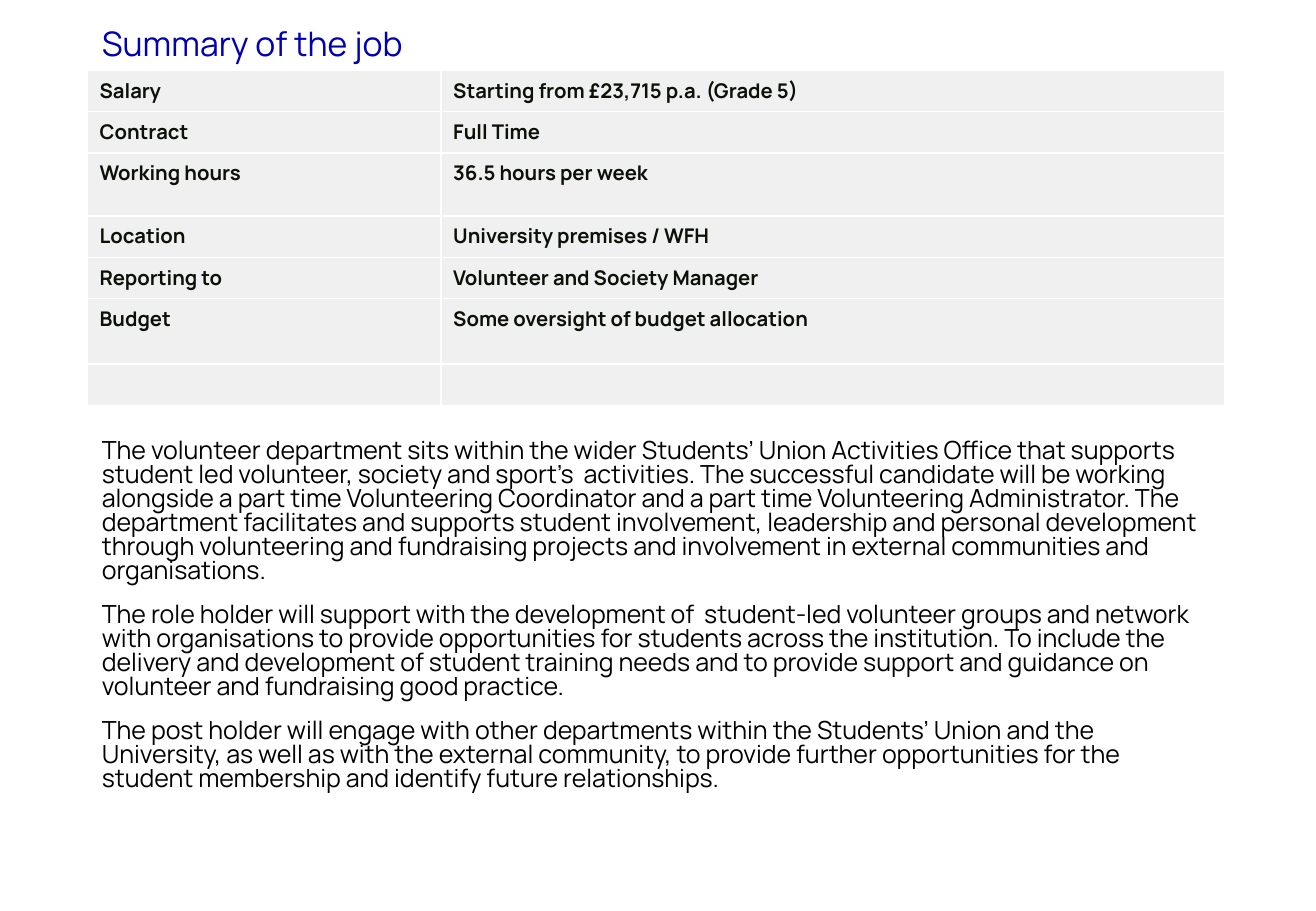
from dataclasses import dataclass

from lxml.etree import SubElement
from pptx import Presentation
from pptx.dml.color import RGBColor
from pptx.enum.text import MSO_ANCHOR
from pptx.oxml.ns import qn
from pptx.slide import Slide
from pptx.table import _Cell
from pptx.text.text import _Paragraph
from pptx.util import Emu, Pt

EMU_PER_PX = 9144
FONT = "Manrope"
BLACK = RGBColor(0x00, 0x00, 0x00)
BLUE = RGBColor(0x00, 0x01, 0xB4)
INK = RGBColor(0x0B, 0x11, 0x07)
GREY = RGBColor(0xF0, 0xF0, 0xF0)
WHITE = RGBColor(0xFF, 0xFF, 0xFF)


@dataclass(frozen=True)
class Style:
    size: float
    color: RGBColor
    bold: bool = False


@dataclass(frozen=True)
class TextBlock:
    left: int
    top: int
    width: int
    height: int
    paragraphs: tuple[str, ...]
    style: Style
    line_spacing: float
    space_after: int
    anchor: MSO_ANCHOR


@dataclass(frozen=True)
class JobFact:
    label: str
    value: str
    height: int = 34


TITLE = TextBlock(
    74, 10, 934, 55, ("Summary of the job",),
    Style(20, BLUE), 0.9, 0, MSO_ANCHOR.MIDDLE,
)
DESCRIPTION = TextBlock(
    74, 358, 934, 314,
    (
        "The volunteer department sits within the wider Students’ Union Activities Office "
        "that supports student led volunteer, society and sport’s  activities. The successful "
        "candidate will be working alongside a part time Volunteering Coordinator and a part "
        "time Volunteering Administrator. The department facilitates and supports student "
        "involvement, leadership and personal development through volunteering and fundraising "
        "projects and involvement in external communities and organisations.",
        "The role holder will support with the development of  student-led volunteer groups "
        "and network with organisations to provide opportunities for students across the "
        "institution. To include the delivery and development of student training needs and to "
        "provide support and guidance on volunteer and fundraising good practice.",
        "The post holder will engage with other departments within the Students’ Union and the "
        "University, as well as with the external community, to provide further opportunities "
        "for the student membership and identify future relationships.",
    ),
    Style(14.8, BLACK), 0.8, 12, MSO_ANCHOR.TOP,
)
FACT_STYLE = Style(12, INK, bold=True)
FACT_COLUMNS = (291, 645)
FACTS = (
    JobFact("Salary", "Starting from £23,715 p.a. (Grade 5)"),
    JobFact("Contract", "Full Time"),
    JobFact("Working hours", "36.5 hours per week", 52),
    JobFact("Location", "University premises / WFH"),
    JobFact("Reporting to", "Volunteer and Society Manager"),
    JobFact("Budget", "Some oversight of budget allocation", 54),
    JobFact("", ""),
)


def px(length: int) -> Emu:
    return Emu(length * EMU_PER_PX)


def add_span(para: _Paragraph, text: str, style: Style) -> None:
    span = para.add_run()
    span.text = text
    span.font.name = FONT
    span.font.size = Pt(style.size)
    span.font.bold = style.bold
    span.font.color.rgb = style.color


def draw_text(page: Slide, block: TextBlock) -> None:
    box = page.shapes.add_textbox(
        px(block.left), px(block.top), px(block.width), px(block.height)
    )
    frame = box.text_frame
    frame.word_wrap = True
    frame.vertical_anchor = block.anchor
    for index, text in enumerate(block.paragraphs):
        para = frame.add_paragraph() if index else frame.paragraphs[0]
        para.line_spacing = block.line_spacing
        para.space_after = Pt(block.space_after)
        add_span(para, text, block.style)


def add_borders(cell: _Cell) -> None:
    properties = cell._tc.get_or_add_tcPr()
    for position, side in enumerate(("lnL", "lnR", "lnT", "lnB")):
        line = properties.makeelement(qn(f"a:{side}"), {"w": str(Pt(1))})
        fill = SubElement(line, qn("a:solidFill"))
        SubElement(fill, qn("a:srgbClr"), val=str(WHITE))
        properties.insert(position, line)


def fill_cell(cell: _Cell, text: str) -> None:
    cell.fill.solid()
    cell.fill.fore_color.rgb = GREY
    add_borders(cell)
    para = cell.text_frame.paragraphs[0]
    if text:
        add_span(para, text, FACT_STYLE)
    else:
        SubElement(para._p, qn("a:endParaRPr"), sz=str(FACT_STYLE.size * 100))


def draw_facts(page: Slide) -> None:
    height = sum(fact.height for fact in FACTS)
    table = page.shapes.add_table(
        len(FACTS), len(FACT_COLUMNS), px(72), px(58), px(sum(FACT_COLUMNS)), px(height)
    ).table
    table.first_row = False
    table.horz_banding = False
    for column, width in zip(table.columns, FACT_COLUMNS):
        column.width = px(width)
    for row, fact in zip(table.rows, FACTS):
        row.height = px(fact.height)
        for cell, text in zip(row.cells, (fact.label, fact.value)):
            fill_cell(cell, text)


def main() -> None:
    deck = Presentation()
    deck.slide_width = px(1083)
    deck.slide_height = px(750)
    page = deck.slides.add_slide(deck.slide_layouts[6])
    draw_text(page, DESCRIPTION)
    draw_text(page, TITLE)
    draw_facts(page)
    deck.save("out.pptx")


if __name__ == "__main__":
    main()
